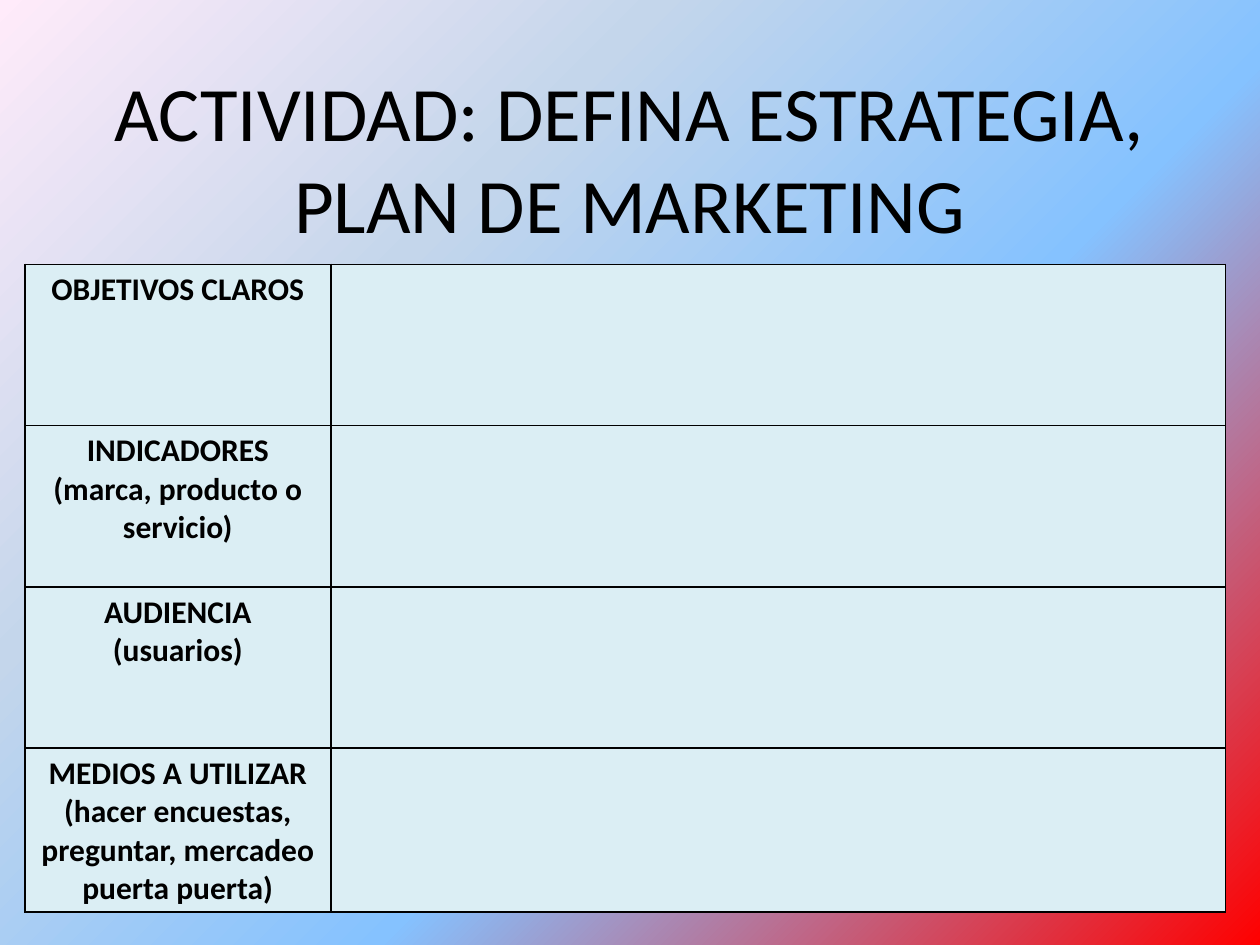
import copy

import pptx
import pptx.dml.color
import pptx.enum.text
import pptx.oxml
import pptx.oxml.ns
import pptx.util
from pptx.util import Cm

# Content
TITLE = "ACTIVIDAD: DEFINA ESTRATEGIA, PLAN DE MARKETING"
ROWS = [
    "OBJETIVOS CLAROS",
    "INDICADORES (marca, producto o servicio)",
    "AUDIENCIA (usuarios)",
    "MEDIOS A UTILIZAR (hacer encuestas, preguntar, mercadeo puerta puerta)",
]

THEME = {
    "font": "Calibri",
    "title_size": 44,
    "cell_size": 18,
    "text": "000000",
    "cell": "DBEEF4",
    "border": "000000",
    "border_pt": 1,
    "gradient": [(0, "FF0000"), (40, "85C2FF"), (70, "C4D6EB"), (100, "FFEBFA")],
    "gradient_angle": 135,  # counter-clockwise: bottom right to top left
}
COL_WIDTHS = [Cm(6.17), Cm(18.03)]
ROW_HEIGHT = Cm(3.25)


def rgb(name):
    return pptx.dml.color.RGBColor.from_string(THEME[name])


def write(tf, text, size, bold=False):
    p = tf.paragraphs[0]
    p.text = text
    p.alignment = pptx.enum.text.PP_ALIGN.CENTER
    p.font.name = THEME["font"]
    p.font.size = pptx.util.Pt(THEME[size])
    p.font.bold = bold
    p.font.color.rgb = rgb("text")


def paint_background(s):
    fill = s.background.fill
    fill.gradient()
    fill.gradient_angle = THEME["gradient_angle"]
    stops = s._element.find(".//" + pptx.oxml.ns.qn("a:gsLst"))
    template = copy.deepcopy(stops[0])
    for stop in list(stops):
        stops.remove(stop)
    for _ in THEME["gradient"]:
        stops.append(copy.deepcopy(template))
    for stop, (position, color) in zip(fill.gradient_stops, THEME["gradient"]):
        stop.position = position / 100
        stop.color.rgb = pptx.dml.color.RGBColor.from_string(color)


def add_borders(cell):
    width = pptx.util.Pt(THEME["border_pt"])
    for side in ("lnL", "lnR", "lnT", "lnB"):
        cell._tc.get_or_add_tcPr().append(pptx.oxml.parse_xml(
            f'<a:{side} {pptx.oxml.ns.nsdecls("a")} w="{width}"><a:solidFill>'
            f'<a:srgbClr val="{THEME["border"]}"/></a:solidFill></a:{side}>'))


def main():
    prs = pptx.Presentation()
    prs.slide_width, prs.slide_height = Cm(25.4), Cm(19.05)
    s = prs.slides.add_slide(prs.slide_layouts[6])
    paint_background(s)

    # Title
    sp = s.shapes.add_textbox(Cm(1.9), Cm(1.12), Cm(21.6), Cm(4.08))
    tf = sp.text_frame
    tf.word_wrap = True
    tf.vertical_anchor = pptx.enum.text.MSO_ANCHOR.MIDDLE
    write(tf, TITLE, "title_size")

    # Worksheet table: labels on the left, room to answer on the right
    table = s.shapes.add_table(len(ROWS), len(COL_WIDTHS), Cm(0.5), Cm(5.33),
                               sum(COL_WIDTHS), ROW_HEIGHT * len(ROWS)).table
    for column, width in zip(table.columns, COL_WIDTHS):
        column.width = width
    for row, label in zip(table.rows, ROWS):
        row.height = ROW_HEIGHT
        for cell in row.cells:
            add_borders(cell)
            cell.fill.solid()
            cell.fill.fore_color.rgb = rgb("cell")
        write(row.cells[0].text_frame, label, "cell_size", bold=True)

    prs.save("out.pptx")


if __name__ == "__main__":
    main()
